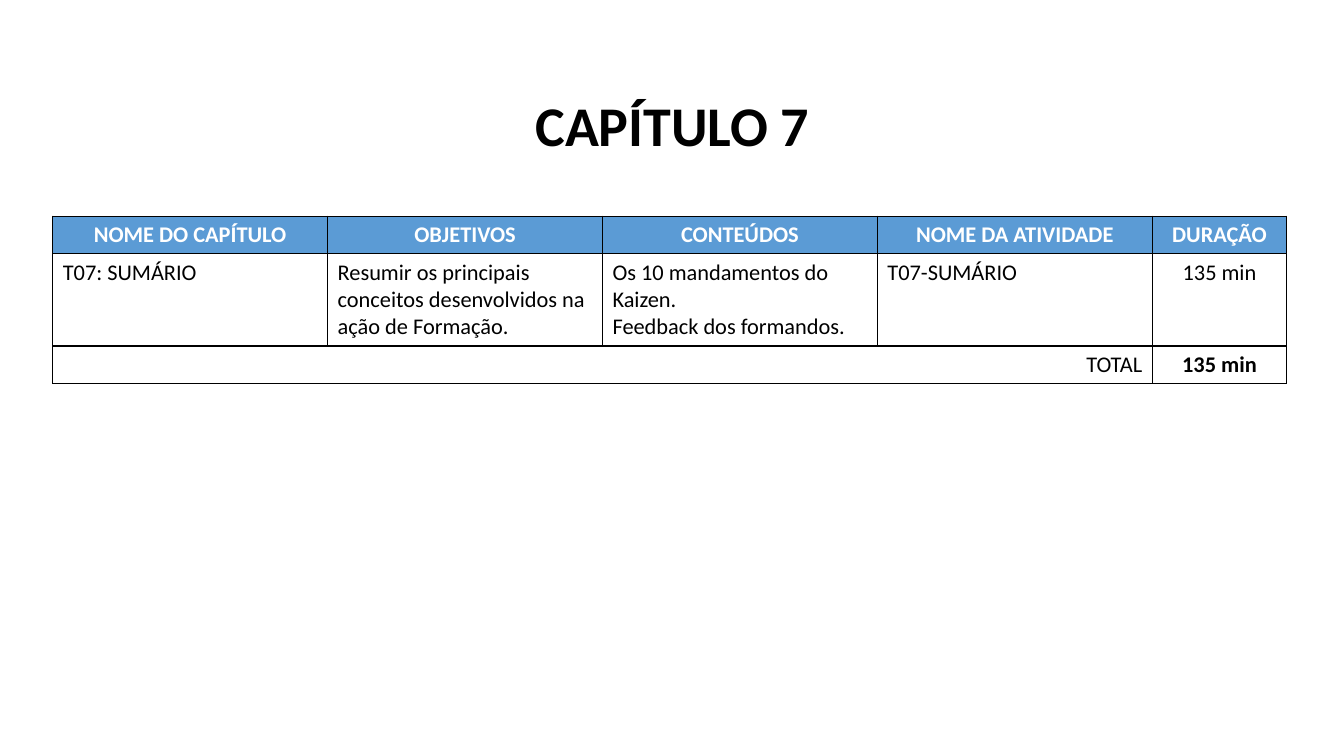
from pptx import Presentation
from pptx.dml.color import RGBColor
from pptx.enum.text import MSO_ANCHOR, PP_ALIGN
from pptx.oxml.ns import qn
from pptx.util import Cm, Pt
from lxml.etree import SubElement

BLACK = RGBColor(0x00, 0x00, 0x00)
WHITE = RGBColor(0xFF, 0xFF, 0xFF)
HEADER_BLUE = RGBColor(0x5B, 0x9B, 0xD5)
FONT = "Calibri"

HEADINGS = ["NOME DO CAPÍTULO", "OBJETIVOS", "CONTEÚDOS", "NOME DA ATIVIDADE", "DURAÇÃO"]
CHAPTER = [
    "T07: SUMÁRIO",
    "Resumir os principais conceitos desenvolvidos na ação de Formação.",
    "Os 10 mandamentos do Kaizen.\nFeedback dos formandos.",
    "T07-SUMÁRIO",
    "135 min",
]
TOTAL = ["TOTAL", "", "", "", "135 min"]
ROW_HEIGHTS = [0.93, 2.3, 0.93]
DURATION_SHARE = 0.109


def style_paragraph(para, size, color, bold, alignment):
    para.alignment = alignment
    para.font.name = FONT
    para.font.size = Pt(size)
    para.font.bold = bold
    para.font.color.rgb = color


def add_borders(cell):
    properties = cell._tc.get_or_add_tcPr()
    for side in ("a:lnL", "a:lnR", "a:lnT", "a:lnB"):
        line = SubElement(properties, qn(side), w=str(Pt(1)))
        fill = SubElement(line, qn("a:solidFill"))
        SubElement(fill, qn("a:srgbClr"), val=str(BLACK))


def add_title(page, text, left, top, width, height):
    title = page.shapes.title
    title.left, title.top, title.width, title.height = left, top, width, height
    frame = title.text_frame
    frame.text = text
    frame.vertical_anchor = MSO_ANCHOR.TOP
    style_paragraph(frame.paragraphs[0], 40, BLACK, True, PP_ALIGN.CENTER)


def cell_alignment(row, column):
    if row == 0 or column == len(HEADINGS) - 1:
        return PP_ALIGN.CENTER
    return PP_ALIGN.RIGHT if row == 2 else PP_ALIGN.LEFT


def add_chapter_table(page, left, top, width):
    rows = [HEADINGS, CHAPTER, TOTAL]
    last = len(HEADINGS) - 1
    table = page.shapes.add_table(
        len(rows), len(HEADINGS), left, top, width, Cm(sum(ROW_HEIGHTS))
    ).table

    # Four equal columns and a narrow one for the duration
    duration_width = int(width * DURATION_SHARE)
    for index, column in enumerate(table.columns):
        column.width = duration_width if index == last else (width - duration_width) // last

    # Cell contents
    for row, texts in enumerate(rows):
        table.rows[row].height = Cm(ROW_HEIGHTS[row])
        header = row == 0
        for column, text in enumerate(texts):
            cell = table.cell(row, column)
            add_borders(cell)
            cell.fill.solid()
            cell.fill.fore_color.rgb = HEADER_BLUE if header else WHITE
            cell.vertical_anchor = MSO_ANCHOR.MIDDLE if header else MSO_ANCHOR.TOP
            cell.text = text
            bold = header or (row == 2 and column == last)
            for para in cell.text_frame.paragraphs:
                style_paragraph(para, 16, WHITE if header else BLACK, bold,
                                cell_alignment(row, column))

    # The total label spans every column but the duration
    table.cell(2, 0).merge(table.cell(2, last - 1))


def main():
    deck = Presentation()
    deck.slide_width, deck.slide_height = Cm(33.87), Cm(19.05)
    page = deck.slides.add_slide(deck.slide_layouts[5])
    add_title(page, "CAPÍTULO 7", Cm(6.38), Cm(2.16), Cm(21.13), Cm(1.96))
    add_chapter_table(page, Cm(1.33), Cm(5.45), Cm(31.1))
    deck.save("out.pptx")


if __name__ == "__main__":
    main()
